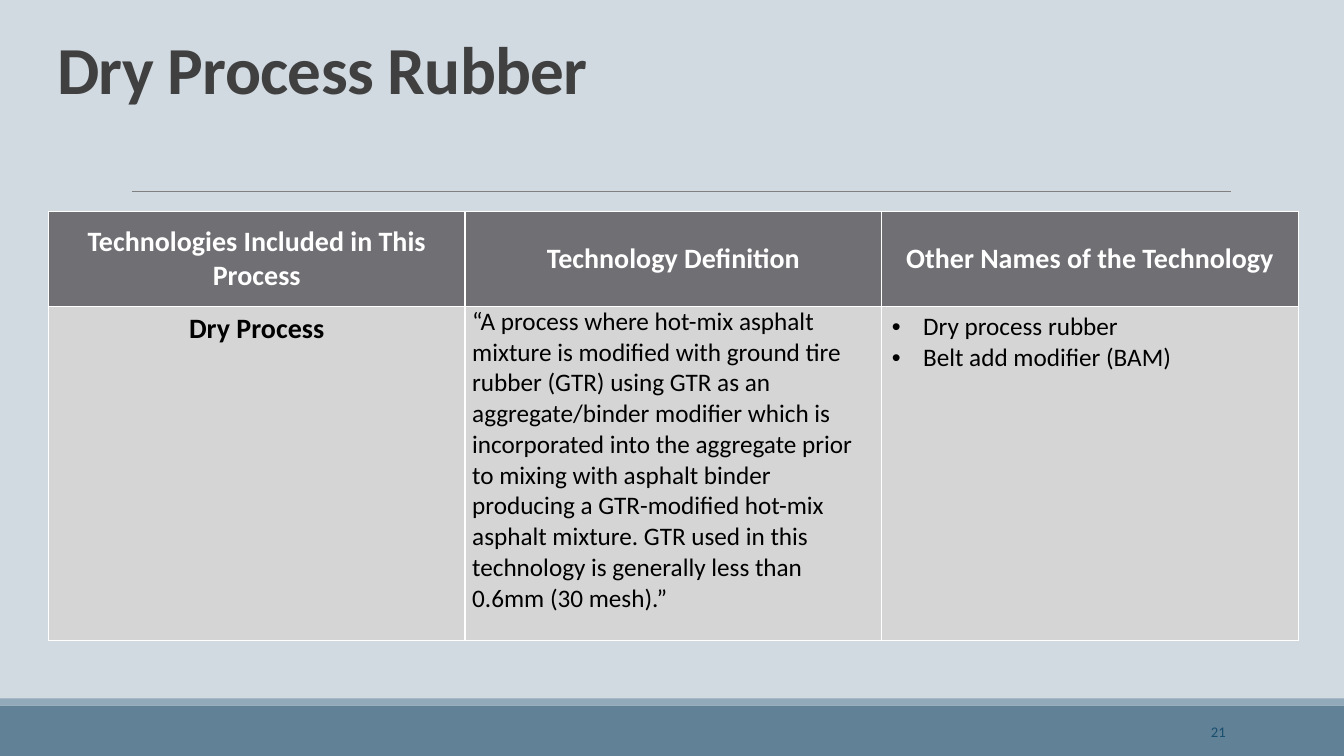
from dataclasses import dataclass, field
from typing import Any

from lxml import etree
from pptx import Presentation
from pptx import util as u
from pptx.dml.color import RGBColor
from pptx.enum import shapes, text
from pptx.oxml import ns

BACKGROUND = RGBColor(0xD1, 0xD9, 0xE1)
FOOTER = RGBColor(0x61, 0x81, 0x97)
FOOTER_EDGE = RGBColor(0x92, 0xA9, 0xB9)
RULE = RGBColor(0x80, 0x80, 0x80)
TITLE = RGBColor(0x40, 0x40, 0x40)
NUMBER = RGBColor(0x18, 0x4E, 0x6D)
HEADER_FILL = RGBColor(0x6F, 0x6F, 0x74)
BODY_FILL = RGBColor(0xD5, 0xD5, 0xD6)
WHITE = RGBColor(0xFF, 0xFF, 0xFF)
BLACK = RGBColor(0x00, 0x00, 0x00)

WIDTH, HEIGHT = u.Cm(33.87), u.Cm(19.05)
LEFT, CENTER, RIGHT = text.PP_ALIGN.LEFT, text.PP_ALIGN.CENTER, text.PP_ALIGN.RIGHT
TOP, MIDDLE, BOTTOM = (text.MSO_ANCHOR.TOP, text.MSO_ANCHOR.MIDDLE,
                       text.MSO_ANCHOR.BOTTOM)


@dataclass
class Style:
    size: float
    color: RGBColor
    bold: bool = False
    align: Any = LEFT
    spacing: float = 1.0
    tracking: int = 0
    bullet: str = ""


@dataclass
class Box:
    left: float
    top: float
    width: float
    height: float

    def lengths(self) -> list[u.Length]:
        return [u.Cm(v) for v in (self.left, self.top, self.width, self.height)]


@dataclass
class Bar:
    box: Box
    color: RGBColor


@dataclass
class Label:
    box: Box
    words: str
    style: Style
    anchor: Any


@dataclass
class TableCell:
    lines: list[str]
    style: Style
    fill: RGBColor = BODY_FILL
    format: dict[str, Any] = field(default_factory=dict)


HEADER = Style(20, WHITE, True, CENTER)
NAME = Style(20, BLACK, True, CENTER)
BODY = Style(18, BLACK)
BULLETS = Style(18, BLACK, bullet="•")

BARS = [
    Bar(Box(0, 17.78, 33.87, 1.27), FOOTER),
    Bar(Box(0, 17.6, 33.87, 0.18), FOOTER_EDGE),
]
LABELS = [
    Label(Box(1.19, 0.74, 31.6, 2.11), "Dry Process Rubber",
          Style(48, TITLE, True, spacing=0.85, tracking=-50), BOTTOM),
    Label(Box(27.51, 17.93, 3.63, 1.02), "21",
          Style(10.5, NUMBER, align=RIGHT), MIDDLE),
]
HEADINGS = ["Technologies Included in This Process", "Technology Definition",
            "Other Names of the Technology"]
DEFINITION = (
    "“A process where hot-mix asphalt mixture is modified with ground tire "
    "rubber (GTR) using GTR as an aggregate/binder modifier which is "
    "incorporated into the aggregate prior to mixing with asphalt binder "
    "producing a GTR-modified hot-mix asphalt mixture. GTR used in this "
    "technology is generally less than 0.6mm (30 mesh).”"
)
TIGHT = {"margin_left": u.Cm(0.18), "margin_right": u.Cm(0.18),
         "margin_top": 0, "margin_bottom": 0}
ROWS = [
    [TableCell([h], HEADER, HEADER_FILL, {"vertical_anchor": MIDDLE})
     for h in HEADINGS],
    [TableCell(["Dry Process"], NAME),
     TableCell([DEFINITION], BODY, format=TIGHT),
     TableCell(["Dry process rubber", "Belt add modifier (BAM)"], BULLETS)],
]
TABLE_BOX = Box(1.22, 5.33, 31.5, 10.8)
ROW_HEIGHTS = [2.39, 8.41]


def apply(target: Any, values: dict[str, Any]) -> None:
    for name, value in values.items():
        setattr(target, name, value)


def write(tf: Any, lines: list[str], style: Style) -> None:
    for i, line in enumerate(lines):
        p = tf.add_paragraph() if i else tf.paragraphs[0]
        apply(p, {"alignment": style.align, "line_spacing": style.spacing})
        r = p.add_run()
        r.text = line
        apply(r.font, {"name": "Calibri", "size": u.Pt(style.size),
                       "bold": style.bold})
        r.font.color.rgb = style.color
        if style.tracking:
            r._r.get_or_add_rPr().set("spc", str(style.tracking))
        if style.bullet:
            pPr = p._p.get_or_add_pPr()
            pPr.set("marL", str(u.Cm(0.79)))
            pPr.set("indent", str(-u.Cm(0.79)))
            etree.SubElement(pPr, ns.qn("a:buFont"), typeface="Arial")
            etree.SubElement(pPr, ns.qn("a:buChar"), char=style.bullet)


def add_bar(s: Any, bar: Bar) -> None:
    sp = s.shapes.add_shape(shapes.MSO_SHAPE.RECTANGLE, *bar.box.lengths())
    sp.shadow.inherit = False
    sp.fill.solid()
    sp.fill.fore_color.rgb = bar.color
    sp.line.fill.background()


def add_rule(s: Any, left: float, right: float, y: float) -> None:
    line = s.shapes.add_connector(shapes.MSO_CONNECTOR.STRAIGHT,
                                  u.Cm(left), u.Cm(y), u.Cm(right), u.Cm(y))
    line.line.color.rgb = RULE
    line.line.width = u.Pt(0.5)
    etree.SubElement(line._element.spPr, ns.qn("a:effectLst"))


def add_label(s: Any, label: Label) -> None:
    tf = s.shapes.add_textbox(*label.box.lengths()).text_frame
    apply(tf, {"word_wrap": True, "vertical_anchor": label.anchor})
    write(tf, [label.words], label.style)


def add_borders(cell: Any) -> None:
    tcPr = cell._tc.get_or_add_tcPr()
    for side in ("lnL", "lnR", "lnT", "lnB"):
        ln = etree.SubElement(tcPr, ns.qn(f"a:{side}"), w=str(u.Pt(1)))
        fill = etree.SubElement(ln, ns.qn("a:solidFill"))
        etree.SubElement(fill, ns.qn("a:srgbClr"), val=str(WHITE))


def add_technologies(s: Any) -> None:
    table = s.shapes.add_table(len(ROWS), len(HEADINGS),
                               *TABLE_BOX.lengths()).table
    table.horz_banding = False
    for row, height in zip(table.rows, ROW_HEIGHTS):
        row.height = u.Cm(height)
    for row, contents in zip(table.rows, ROWS):
        for cell, content in zip(row.cells, contents):
            apply(cell, {"vertical_anchor": TOP} | content.format)
            add_borders(cell)
            cell.fill.solid()
            cell.fill.fore_color.rgb = content.fill
            write(cell.text_frame, content.lines, content.style)


def main() -> None:
    prs = Presentation()
    apply(prs, {"slide_width": WIDTH, "slide_height": HEIGHT})
    s = prs.slides.add_slide(prs.slide_layouts[6])
    s.background.fill.solid()
    s.background.fill.fore_color.rgb = BACKGROUND
    for bar in BARS:
        add_bar(s, bar)
    add_rule(s, 3.33, 31.01, 4.83)
    add_technologies(s)
    for label in LABELS:
        add_label(s, label)
    prs.save("out.pptx")


if __name__ == "__main__":
    main()
